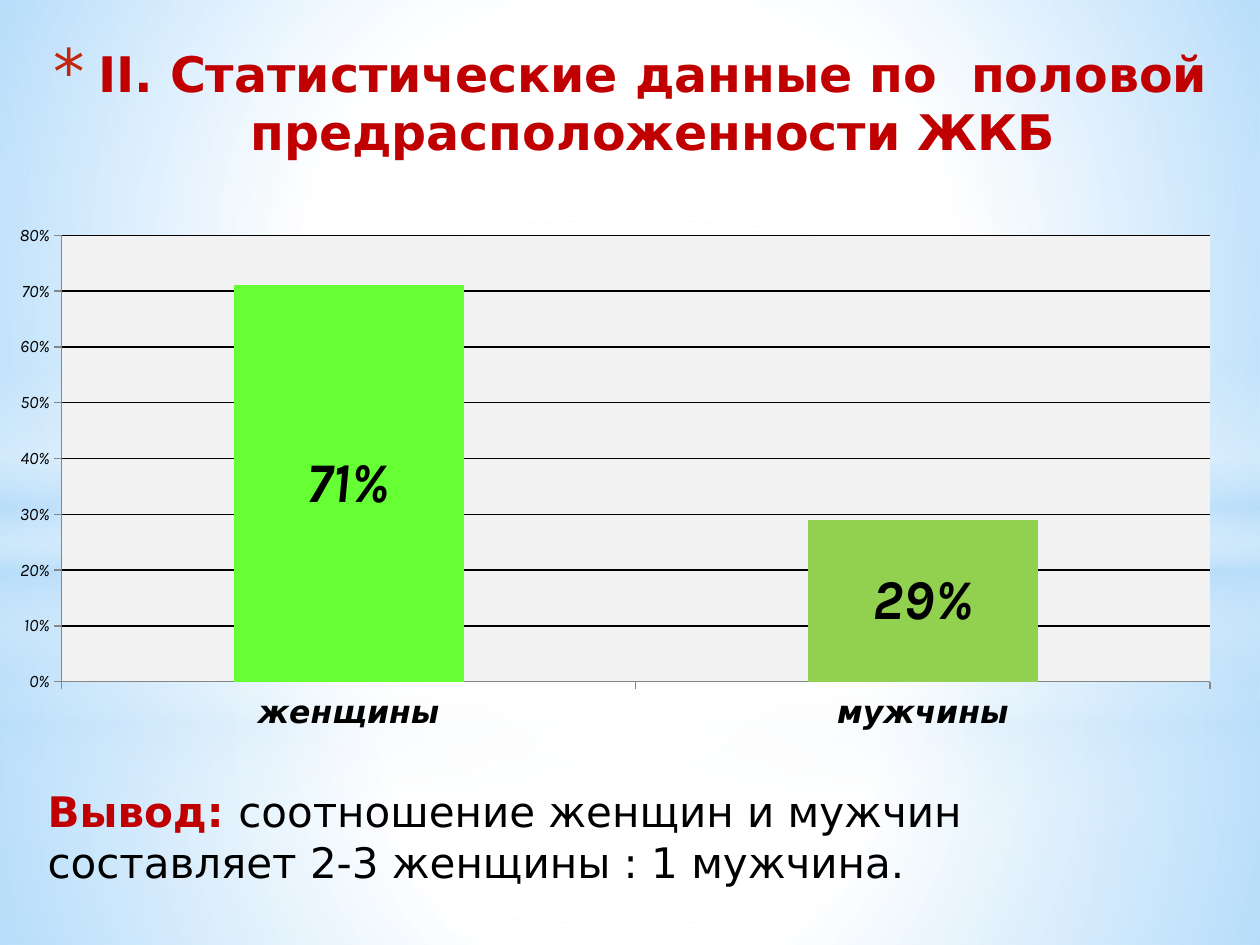
import lxml.etree
import pptx
import pptx.chart.data
import pptx.dml.color
import pptx.enum.chart
import pptx.enum.shapes
import pptx.enum.text
import pptx.oxml
import pptx.oxml.ns
import pptx.util

Cm = pptx.util.Cm
Pt = pptx.util.Pt
RGBColor = pptx.dml.color.RGBColor
qn = pptx.oxml.ns.qn

WHITE = RGBColor(0xFF, 0xFF, 0xFF)
SKY = RGBColor(0xB4, 0xDC, 0xFA)
RED = RGBColor(0xC0, 0x00, 0x00)
BULLET_RED = RGBColor(0xC3, 0x26, 0x0C)
BLACK = RGBColor(0x00, 0x00, 0x00)
GREY = RGBColor(0x86, 0x86, 0x86)
PLOT_GREY = RGBColor(0xF2, 0xF2, 0xF2)
LIME = RGBColor(0x66, 0xFF, 0x33)
GREEN = RGBColor(0x92, 0xD0, 0x50)

TEXT_FONT = "DejaVu Sans"
CHART_FONT = "Karla"
WIDTH, HEIGHT = Cm(25.4), Cm(19.05)
BAND_STOPS = [(0, WHITE, 0), (29, WHITE, 30), (45, SKY, 40),
              (55, WHITE, 26), (65, SKY, 60), (100, WHITE, 0)]
RADIAL = ('<a:path path="circle"><a:fillToRect l="50000" t="50000" '
          'r="50000" b="50000"/></a:path>')
LINEAR = '<a:lin ang="5400000" scaled="0"/>'


def add_gradient(page, kind, top, height, stops, direction):
    """Add a full-width borderless shape with a translucent gradient."""
    shape = page.shapes.add_shape(kind, 0, top, WIDTH, height)
    shape.shadow.inherit = False
    shape.line.fill.background()
    marks = "".join(
        f'<a:gs pos="{place * 1000}"><a:srgbClr val="{color}">'
        f'<a:alpha val="{alpha * 1000}"/></a:srgbClr></a:gs>'
        for place, color, alpha in stops)
    gradient = pptx.oxml.parse_xml(
        f'<a:gradFill {pptx.oxml.ns.nsdecls("a")} rotWithShape="1">'
        f'<a:gsLst>{marks}</a:gsLst>{direction}</a:gradFill>')
    shape.element.spPr.find(qn("a:prstGeom")).addnext(gradient)


def add_backdrop(page, horizon, band_top, extra, glow_end):
    """Add sky, ground, a light band and a central glow around a horizon."""
    rectangle = pptx.enum.shapes.MSO_SHAPE.RECTANGLE
    ellipse = pptx.enum.shapes.MSO_SHAPE.OVAL
    ground = [(0, WHITE, 91 + extra), (37, WHITE, 76 + extra), (100, SKY, 79 + extra)]
    sky = [(0, WHITE, 89 + extra), (48, WHITE, 62 + extra), (100, SKY, 79 + extra)]
    glow = [(0, WHITE, 100), (glow_end, WHITE, 0)]
    add_gradient(page, rectangle, horizon, HEIGHT - horizon, ground, RADIAL)
    add_gradient(page, rectangle, 0, horizon, sky, RADIAL)
    add_gradient(page, rectangle, band_top, Cm(6.35), BAND_STOPS, LINEAR)
    add_gradient(page, ellipse, Cm(4.45), Cm(14.17), glow, RADIAL)


def add_span(para, text, size, color, bold):
    """Append one formatted run to a paragraph."""
    span = para.add_run()
    span.text = text
    span.font.name = TEXT_FONT
    span.font.size = Pt(size)
    span.font.bold = bold
    span.font.color.rgb = color


def add_title(page, left, top, width, height):
    """Add the centred heading with its asterisk bullet."""
    frame = page.shapes.add_textbox(left, top, width, height).text_frame
    frame.word_wrap = True
    frame.vertical_anchor = pptx.enum.text.MSO_ANCHOR.BOTTOM
    frame.margin_bottom = Cm(1.28)
    para = frame.paragraphs[0]
    para.alignment = pptx.enum.text.PP_ALIGN.CENTER
    properties = para._p.get_or_add_pPr()
    properties.set("marL", str(Cm(0.89)))
    properties.set("indent", str(-Cm(0.89)))
    color = lxml.etree.SubElement(properties, qn("a:buClr"))
    lxml.etree.SubElement(color, qn("a:srgbClr"), val=str(BULLET_RED))
    lxml.etree.SubElement(properties, qn("a:buSzPct"), val="128000")
    lxml.etree.SubElement(properties, qn("a:buFont"), typeface=TEXT_FONT)
    lxml.etree.SubElement(properties, qn("a:buChar"), char="*")
    add_span(para, "II. Статистические данные по  половой предрасположенности ЖКБ",
             28, RED, True)


def add_conclusion(page, left, top, width, height):
    """Add the concluding sentence."""
    frame = page.shapes.add_textbox(left, top, width, height).text_frame
    frame.word_wrap = True
    para = frame.paragraphs[0]
    add_span(para, "Вывод: ", 24, RED, True)
    add_span(para, "соотношение женщин и мужчин составляет 2-3 женщины : 1 мужчина.",
             24, BLACK, False)


def set_plot_area(chart, x, y, w, h):
    """Fix the inner plot area by fractions of the chart and fill it."""
    area = chart._chartSpace.chart.plotArea
    for old in area.findall(qn("c:layout")):
        area.remove(old)
    sizes = "".join(f'<c:{name} val="{value}"/>'
                    for name, value in zip("xywh", (x, y, w, h)))
    area.insert(0, pptx.oxml.parse_xml(
        f'<c:layout {pptx.oxml.ns.nsdecls("c")}><c:manualLayout>'
        '<c:layoutTarget val="inner"/><c:xMode val="edge"/><c:yMode val="edge"/>'
        f'{sizes}</c:manualLayout></c:layout>'))
    area.append(pptx.oxml.parse_xml(
        f'<c:spPr {pptx.oxml.ns.nsdecls("c", "a")}><a:solidFill>'
        f'<a:srgbClr val="{PLOT_GREY}"/></a:solidFill></c:spPr>'))


def style_font(font, name, size, bold):
    """Set the italic black lettering used in the chart."""
    font.name = name
    font.size = Pt(size)
    font.bold = bold
    font.italic = True
    font.color.rgb = BLACK


def add_sex_chart(page, left, top, width, height):
    """Add the column chart of shares by sex."""
    data = pptx.chart.data.CategoryChartData(number_format="0%")
    data.categories = ["женщины", "мужчины"]
    data.add_series("Series 1", [0.71, 0.29])
    chart = page.shapes.add_chart(
        pptx.enum.chart.XL_CHART_TYPE.COLUMN_STACKED,
        left, top, width, height, data).chart
    chart.has_legend = False
    chart.has_title = False
    style_font(chart.font, CHART_FONT, 10, False)
    set_plot_area(chart, 0.05, 0.04, 0.93, 0.85)

    for axis in (chart.category_axis, chart.value_axis):
        axis.major_tick_mark = pptx.enum.chart.XL_TICK_MARK.OUTSIDE
        axis.format.line.color.rgb = GREY
    style_font(chart.category_axis.tick_labels.font, TEXT_FONT, 18, True)
    scale = chart.value_axis
    scale.minimum_scale, scale.maximum_scale, scale.major_unit = 0, 0.8, 0.1
    scale.tick_labels.number_format = "0%"
    scale.tick_labels.number_format_is_linked = False
    scale.major_gridlines.format.line.color.rgb = BLACK
    scale.major_gridlines.format.line.width = Pt(0.75)

    plot = chart.plots[0]
    plot.gap_width, plot.overlap = 150, 100
    plot.vary_by_categories = False
    series = plot.series[0]
    series.format.fill.solid()
    series.format.fill.fore_color.rgb = LIME
    men = series.points[1].format.fill
    men.solid()
    men.fore_color.rgb = GREEN
    labels = series.data_labels
    labels.show_value = True
    labels.number_format = "0%"
    labels.number_format_is_linked = False
    labels.position = pptx.enum.chart.XL_LABEL_POSITION.CENTER
    style_font(labels.font, CHART_FONT, 32, True)


def main():
    """Build and save the slide."""
    deck = pptx.Presentation()
    deck.slide_width, deck.slide_height = WIDTH, HEIGHT
    page = deck.slides.add_slide(deck.slide_layouts[6])
    add_backdrop(page, Cm(14.17), Cm(10.46), 0, 56)
    add_backdrop(page, Cm(10.74), Cm(7.37), 1, 54)
    add_title(page, Cm(0.71), Cm(0.53), Cm(24), Cm(3.99))
    add_conclusion(page, Cm(0.71), Cm(15.72), Cm(23.39), Cm(2.31))
    add_sex_chart(page, 0, Cm(4.32), Cm(24.89), Cm(10.59))
    deck.save("out.pptx")


if __name__ == "__main__":
    main()
